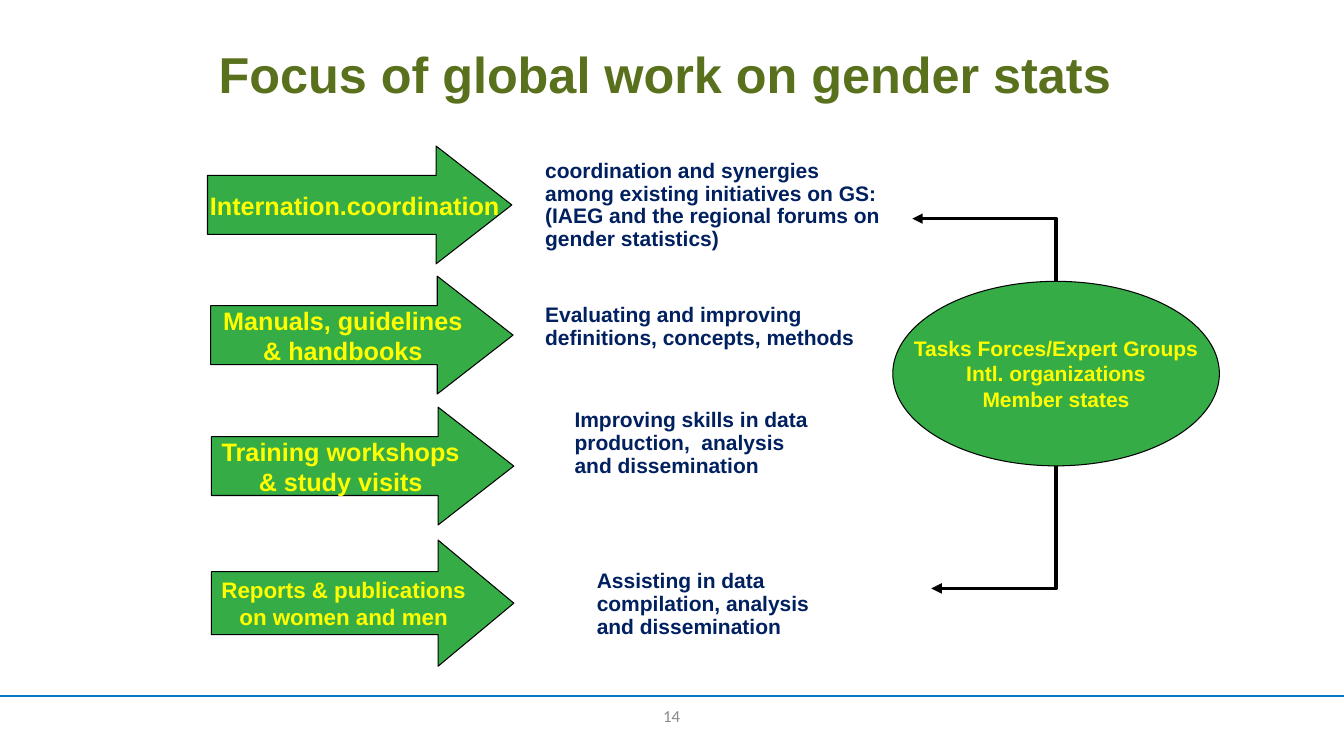
from lxml.etree import SubElement
from pptx import Presentation
from pptx.dml.color import RGBColor
from pptx.enum.shapes import MSO_CONNECTOR as LINK, MSO_SHAPE as SHAPE
from pptx.enum.text import MSO_ANCHOR as ANCHOR, PP_ALIGN as ALIGN
from pptx.oxml.ns import qn
from pptx.util import Cm, Pt

OLIVE = RGBColor(0x59, 0x70, 0x1D)
NAVY = RGBColor(0x00, 0x20, 0x60)
GREEN = RGBColor(0x35, 0xAC, 0x46)
YELLOW = RGBColor(0xFF, 0xFF, 0x00)
BLACK = RGBColor(0x00, 0x00, 0x00)
BLUE = RGBColor(0x00, 0x7A, 0xC2)
GRAY = RGBColor(0x89, 0x89, 0x89)

HEAD_LENGTH = 1.91
FLUSH = (0.48, 0, 0, 0)
INSET = (1.22, 0.13, 0.25, 0.13)

# label, size, box, left margin
ACTIVITIES = [
    ("Internation.coordination", 18, (5.23, 3.68, 7.67, 2.97), 0.96),
    ("Manuals, guidelines\n& handbooks", 18, (5.31, 6.96, 7.62, 2.97), 0.25),
    ("Training workshops\n& study visits", 18, (5.33, 10.26, 7.62, 2.97), 0.1),
    ("Reports & publications\non women and men", 16, (5.33, 13.61, 7.62, 3.18), 0.25),
]
# text, box, margins
GOALS = [
    ("coordination and synergies among existing initiatives on GS: "
     "(IAEG and the regional forums on gender statistics)", (13.26, 4.04, 9.07, 2.18), FLUSH),
    ("Evaluating and improving definitions, concepts, methods", (13.26, 7.67, 8.66, 1.27), FLUSH),
    ("Improving skills in data production,  analysis and dissemination",
     (13.26, 10.19, 7.62, 1.98), INSET),
    ("Assisting in data compilation, analysis and dissemination",
     (13.82, 14.25, 7.62, 1.98), INSET),
]


class SlideBuilder:
    def __init__(self, slide, font="Arial"):
        self.shapes = slide.shapes
        self.font = font

    def set_text(self, frame, text, size, color, align, bold=True, font=None, spacing=None):
        frame.text = text
        for paragraph in frame.paragraphs:
            paragraph.alignment = align
            paragraph.line_spacing = spacing
            for run in paragraph.runs:
                run.font.name = font or self.font
                run.font.size = Pt(size)
                run.font.bold = bold
                run.font.color.rgb = color

    def text(self, text, box, size, color, margins=(0, 0, 0, 0), align=ALIGN.LEFT, **style):
        frame = self.shapes.add_textbox(*map(Cm, box)).text_frame
        frame.word_wrap = True
        (frame.margin_left, frame.margin_top,
         frame.margin_right, frame.margin_bottom) = map(Cm, margins)
        self.set_text(frame, text, size, color, align, **style)

    def labelled_shape(self, kind, text, box, size, margin_left=0.25):
        shape = self.shapes.add_shape(kind, *map(Cm, box))
        shape.shadow.inherit = False
        shape.fill.solid()
        shape.fill.fore_color.rgb = GREEN
        shape.line.color.rgb = BLACK
        shape.line.width = Pt(0.75)
        frame = shape.text_frame
        frame.word_wrap = False
        frame.vertical_anchor = ANCHOR.MIDDLE
        frame.margin_left = Cm(margin_left)
        self.set_text(frame, text, size, YELLOW, ALIGN.CENTER)
        return shape

    def block_arrow(self, text, size, box, margin_left):
        arrow = self.labelled_shape(SHAPE.RIGHT_ARROW, text, box, size, margin_left)
        arrow.adjustments[1] = HEAD_LENGTH / box[3]

    def line(self, start, end, color, width, kind=LINK.STRAIGHT):
        line = self.shapes.add_connector(kind, *map(Cm, start + end))
        line.line.color.rgb = color
        line.line.width = Pt(width)
        SubElement(line._element.spPr, qn("a:effectLst"))
        return line

    def corner_arrow(self, tip, origin):
        """Draw one right-angled bend, level at the tip and upright at the origin."""
        arrow = self.line(tip, origin, BLACK, 2.5, LINK.ELBOW)
        properties = arrow._element.spPr
        properties.find(qn("a:prstGeom")).set("prst", "bentConnector2")
        SubElement(properties.find(qn("a:ln")), qn("a:headEnd"), type="triangle")


def main():
    deck = Presentation()
    deck.slide_width, deck.slide_height = Cm(33.87), Cm(19.05)
    page = SlideBuilder(deck.slides.add_slide(deck.slide_layouts[6]))

    page.line((0, 17.53), (33.87, 17.53), BLUE, 1.5)
    page.text("14", (12.9, 17.65, 8.05, 1.02), 12, GRAY, (0.25, 0.13, 0.25, 0.13),
              ALIGN.CENTER, bold=False, font="Calibri")
    page.text("Focus of global work on gender stats", (5.51, 1.09, 22.86, 1.68), 36, OLIVE)

    for activity in ACTIVITIES:
        page.block_arrow(*activity)
    for goal, box, margins in GOALS:
        page.text(goal, box, 15, NAVY, margins, spacing=0.9)

    left, top, width, height = actors_box = (22.5, 7.09, 8.23, 4.65)
    page.labelled_shape(
        SHAPE.OVAL, "Tasks Forces/Expert Groups\nIntl. organizations\nMember states",
        actors_box, 15)
    middle = left + width / 2
    page.corner_arrow((22.99, 5.51), (middle, top))
    page.corner_arrow((23.47, 14.83), (middle, top + height))

    deck.save("out.pptx")


if __name__ == "__main__":
    main()
